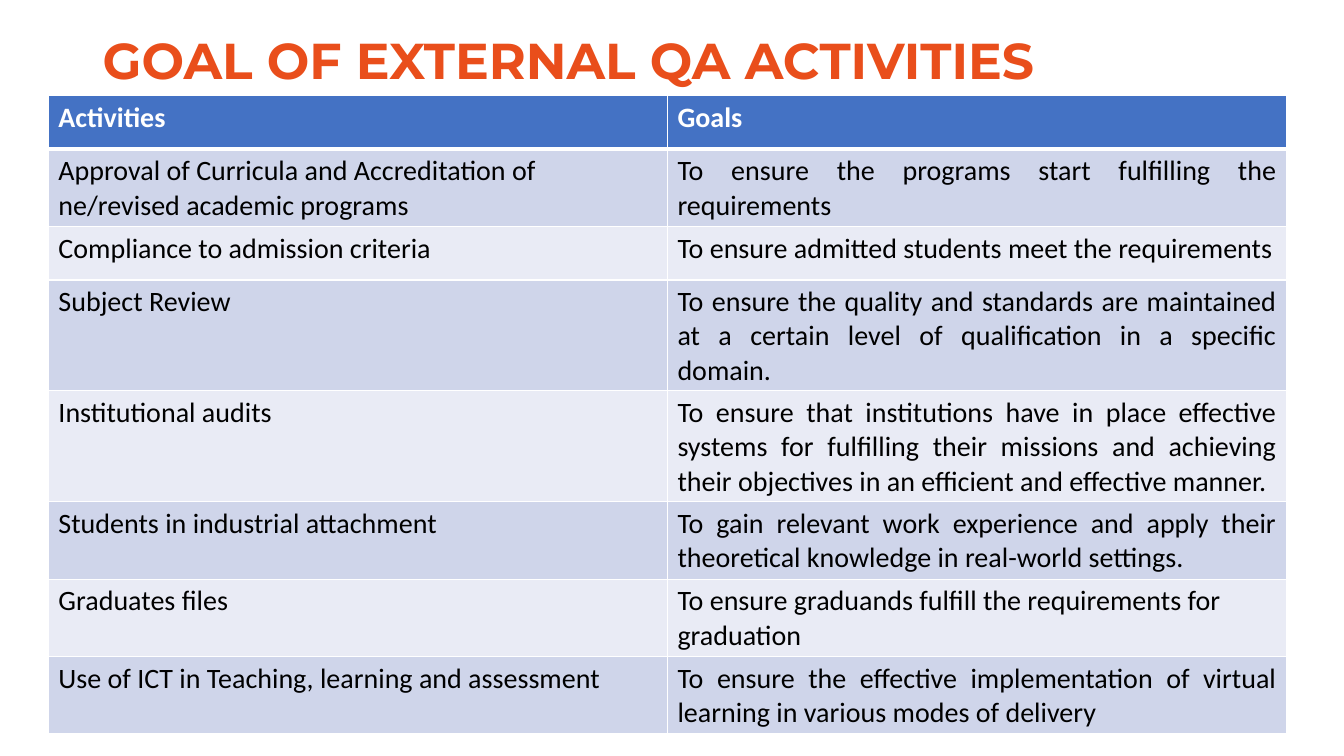
from dataclasses import dataclass

from lxml.etree import SubElement
from pptx import Presentation
from pptx.dml.color import RGBColor
from pptx.enum.text import MSO_ANCHOR, PP_ALIGN
from pptx.oxml.ns import qn
from pptx.util import Inches, Pt


@dataclass(frozen=True)
class Theme:
    """Colours, fonts and type sizes of the slide."""
    warm: tuple = ("E94E1B", "F9B233")
    head: str = "4472C4"
    bands: tuple = ("CFD5EA", "E9EBF5")
    white: str = "FFFFFF"
    black: str = "000000"
    title_font: str = "Montserrat"
    body_font: str = "Calibri"
    title_size: int = 36
    body_size: int = 20
    thin: int = 1
    thick: int = 3


class Page:
    """Draws styled elements on the current slide."""

    def __init__(self, slide, theme):
        self.slide = slide
        self.theme = theme

    def run(self, para, text, face, size, bold):
        """Add one run and return its font."""
        run = para.add_run()
        run.text = text
        font = run.font
        font.name, font.size, font.bold = face, Pt(size), bold
        return font

    def title(self, text, left, top, width, height):
        """Add the heading with its warm gradient."""
        look = self.theme
        box = self.slide.shapes.add_textbox(
            Inches(left), Inches(top), Inches(width), Inches(height))
        frame = box.text_frame
        frame.word_wrap = True
        frame.vertical_anchor = MSO_ANCHOR.MIDDLE
        para = frame.paragraphs[0]
        para.line_spacing = 0.9
        font = self.run(para, text, look.title_font, look.title_size, True)
        font.fill.gradient()
        font.fill.gradient_angle = 340
        for stop, tone in zip(font.fill.gradient_stops, look.warm):
            stop.color.rgb = RGBColor.from_string(tone)

    def edge(self, cell, side, width):
        """Draw one white border of a cell."""
        props = cell._tc.get_or_add_tcPr()
        line = SubElement(props, qn(f"a:ln{side}"), w=str(Pt(width)))
        fill = SubElement(line, qn("a:solidFill"))
        SubElement(fill, qn("a:srgbClr"), val=self.theme.white)

    def cell(self, cell, text, row, align):
        """Fill, border and write one cell."""
        look = self.theme
        head = row == 0
        heavy = {(0, "B"), (1, "T")}
        for side in "LRTB":
            self.edge(cell, side, look.thick if (row, side) in heavy else look.thin)
        cell.fill.solid()
        tone = look.head if head else look.bands[(row - 1) % 2]
        cell.fill.fore_color.rgb = RGBColor.from_string(tone)
        para = cell.text_frame.paragraphs[0]
        para.alignment = align
        font = self.run(para, text, look.body_font, look.body_size, head)
        font.color.rgb = RGBColor.from_string(look.white if head else look.black)

    def table(self, rows, highs, left, top, width):
        """Add the two-column table of activities and goals."""
        grid = self.slide.shapes.add_table(
            len(rows), 2, Inches(left), Inches(top),
            Inches(width), Inches(sum(highs))).table
        for col in grid.columns:
            col.width = Inches(width / 2)
        for num, (name, goal, align) in enumerate(rows):
            grid.rows[num].height = Inches(highs[num])
            self.cell(grid.cell(num, 0), name, num, PP_ALIGN.LEFT)
            self.cell(grid.cell(num, 1), goal, num, align)


LEFT, FULL = PP_ALIGN.LEFT, PP_ALIGN.JUSTIFY
ROWS = [
    ("Activities", "Goals", LEFT),
    ("Approval of Curricula and Accreditation of ne/revised academic programs",
     "To ensure the programs start fulfilling the requirements", FULL),
    ("Compliance to admission criteria",
     "To ensure admitted students meet the requirements", LEFT),
    ("Subject Review",
     "To ensure the quality and standards are maintained at a certain level "
     "of qualification in a specific domain.", FULL),
    ("Institutional audits",
     "To ensure that institutions have in place effective systems for "
     "fulfilling their missions and achieving their objectives in an "
     "efficient and effective manner.", FULL),
    ("Students in industrial attachment",
     "To gain relevant work experience and apply their theoretical knowledge "
     "in real-world settings.", FULL),
    ("Graduates files",
     "To ensure graduands fulfill the requirements for graduation", LEFT),
    ("Use of ICT in Teaching, learning and assessment",
     "To ensure the effective implementation of virtual learning in various "
     "modes of delivery", FULL),
]
HIGHS = [0.53, 0.71, 0.53, 0.71, 1.02, 0.71, 0.71, 0.71]


def main():
    """Build and save the slide."""
    deck = Presentation()
    deck.slide_width, deck.slide_height = Inches(13.33), Inches(7.5)
    page = Page(deck.slides.add_slide(deck.slide_layouts[6]), Theme())
    page.title("GOAL OF EXTERNAL QA ACTIVITIES", 0.92, 0.3, 11.5, 0.65)
    page.table(ROWS, HIGHS, 0.48, 0.95, 12.28)
    deck.save("out.pptx")


if __name__ == "__main__":
    main()
